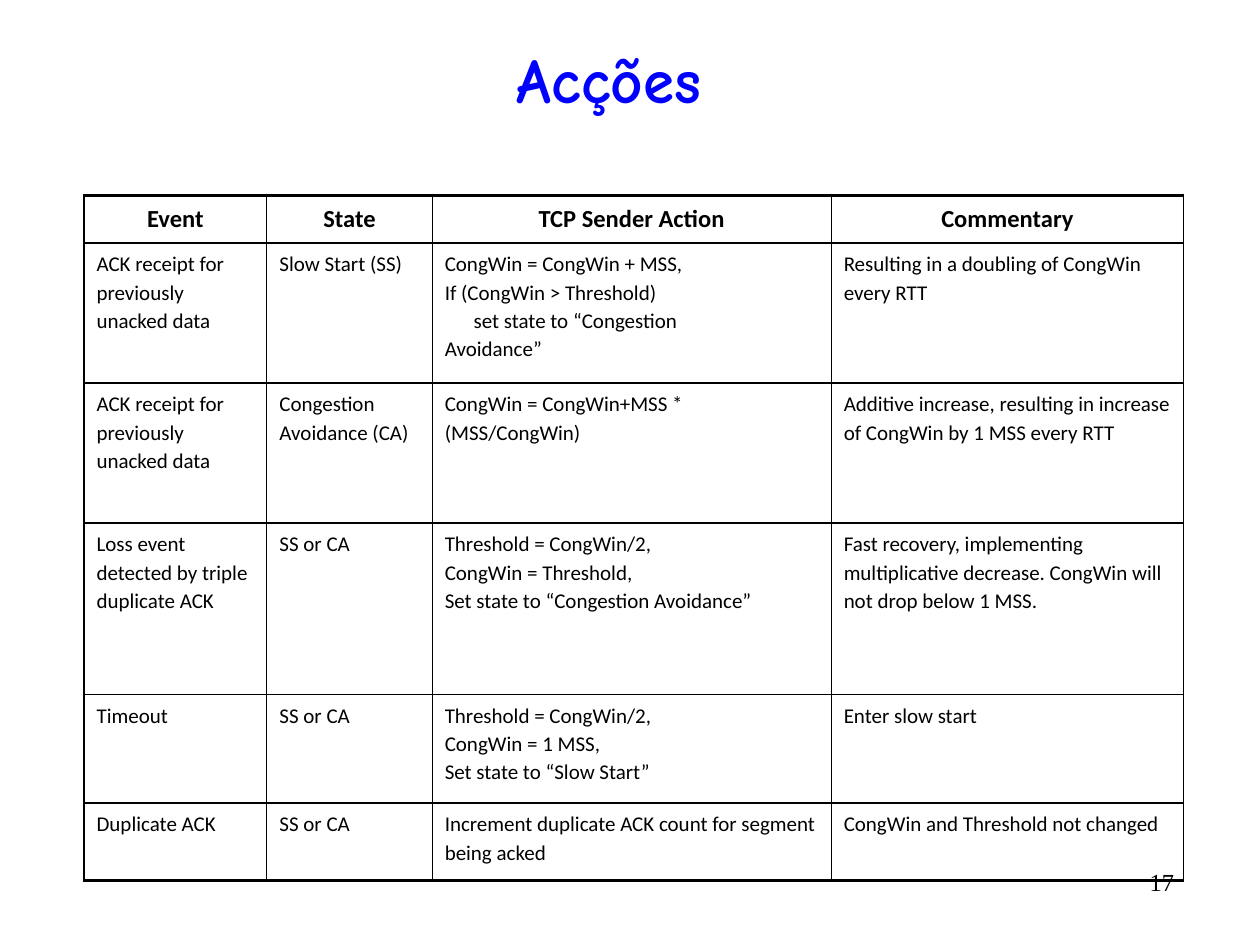
from lxml.etree import SubElement
from pptx import Presentation
from pptx.dml.color import RGBColor
from pptx.enum.text import MSO_ANCHOR, PP_ALIGN
from pptx.oxml import parse_xml
from pptx.oxml.ns import nsdecls, qn
from pptx.util import Pt

HEADINGS = ["Event", "State", "TCP Sender Action", "Commentary"]
UNACKED = "ACK receipt for previously unacked data"
EITHER_STATE = "SS or CA"
HALVING = "Threshold = CongWin/2,"
ACTIONS = [
    [UNACKED, "Slow Start (SS)",
     "CongWin = CongWin + MSS,\nIf (CongWin > Threshold)\n"
     "\tset state to “Congestion\vAvoidance”",
     "Resulting in a doubling of CongWin every RTT"],
    [UNACKED, "Congestion\nAvoidance (CA)",
     "CongWin = CongWin+MSS * (MSS/CongWin)",
     "Additive increase, resulting in increase of CongWin by 1 MSS every RTT"],
    ["Loss event detected by triple duplicate ACK", EITHER_STATE,
     f"{HALVING}\nCongWin = Threshold,\nSet state to “Congestion Avoidance”",
     "Fast recovery, implementing multiplicative decrease. "
     "CongWin will not drop below 1 MSS."],
    ["Timeout", EITHER_STATE,
     f"{HALVING}\nCongWin = 1 MSS,\nSet state to “Slow Start”",
     "Enter slow start"],
    ["Duplicate ACK", EITHER_STATE,
     "Increment duplicate ACK count for segment being acked",
     "CongWin and Threshold not changed"],
]
COLUMN_WIDTHS = [104.5, 94.5, 228, 201.5]
ROW_HEIGHTS = [27.5, 80, 80, 98, 62, 44]


def color(hex_code):
    return RGBColor.from_string(hex_code)


class ActionSlide:
    """Holds the style and the current slide, and adds its elements."""

    ink = "000000"
    title_ink = "0000FF"
    table_font = "Calibri"
    side_line, row_line, outer_line = 0.75, 1, 2
    first_line_indent = 16.5

    def __init__(self, presentation):
        self.slide = presentation.slides.add_slide(presentation.slide_layouts[6])

    def set_text(self, frame, text, font, size, ink, align, bold=False, spacing=None):
        frame.word_wrap = True
        frame.text = text.replace("\t", "")
        for paragraph, line in zip(frame.paragraphs, text.split("\n")):
            paragraph.alignment = align
            paragraph.line_spacing = spacing
            if line.startswith("\t"):
                properties = paragraph._p.get_or_add_pPr()
                properties.set("indent", str(Pt(self.first_line_indent)))
            for line_break in paragraph._p.findall(qn("a:br")):
                SubElement(line_break, qn("a:rPr"), sz=str(size * 100))
            for run in paragraph.runs:
                run.font.name = font
                run.font.size = Pt(size)
                run.font.bold = bold
                run.font.color.rgb = color(ink)

    def text_box(self, text, left, top, width, height, **style):
        box = self.slide.shapes.add_textbox(Pt(left), Pt(top), Pt(width), Pt(height))
        self.set_text(box.text_frame, text, **style)
        return box

    def title(self, text, *place):
        box = self.text_box(text, *place, font="Comic Neue", size=36,
                            ink=self.title_ink, align=PP_ALIGN.CENTER, bold=True)
        box.text_frame.vertical_anchor = MSO_ANCHOR.MIDDLE

    def page_number(self, text, *place):
        self.text_box(text, *place, font="Times New Roman", size=14,
                      ink=self.ink, align=PP_ALIGN.RIGHT)

    def borders(self, cell, top, bottom):
        properties = cell._tc.get_or_add_tcPr()
        sides = [("L", self.side_line), ("R", self.side_line), ("T", top), ("B", bottom)]
        for position, (side, weight) in enumerate(sides):
            properties.insert(position, parse_xml(
                f'<a:ln{side} {nsdecls("a")} w="{Pt(weight)}"><a:solidFill>'
                f'<a:srgbClr val="{self.ink}"/></a:solidFill></a:ln{side}>'))

    def table(self, rows, left, top, widths, heights):
        table = self.slide.shapes.add_table(
            len(rows), len(widths), Pt(left), Pt(top),
            Pt(sum(widths)), Pt(sum(heights))).table
        table.horz_banding = False
        for column, width in zip(table.columns, widths):
            column.width = Pt(width)
        last = len(rows) - 1
        for index, (row, height, texts) in enumerate(zip(table.rows, heights, rows)):
            row.height = Pt(height)
            heading = index == 0
            for cell, text in zip(row.cells, texts):
                cell.fill.background()
                self.borders(cell, self.outer_line if heading else self.row_line,
                             self.outer_line if index == last else self.row_line)
                self.set_text(cell.text_frame, text, self.table_font,
                              14 if heading else 12, self.ink,
                              PP_ALIGN.CENTER if heading else PP_ALIGN.LEFT,
                              bold=heading, spacing=1.1)


def main():
    presentation = Presentation()
    presentation.slide_width, presentation.slide_height = Pt(720), Pt(540)
    page = ActionSlide(presentation)
    page.title("Acções", 42, 18, 612, 54)
    page.table([HEADINGS, *ACTIONS], 48, 111.5, COLUMN_WIDTHS, ROW_HEIGHTS)
    page.page_number("17", 606, 492, 72, 30)
    presentation.save("out.pptx")


if __name__ == "__main__":
    main()
